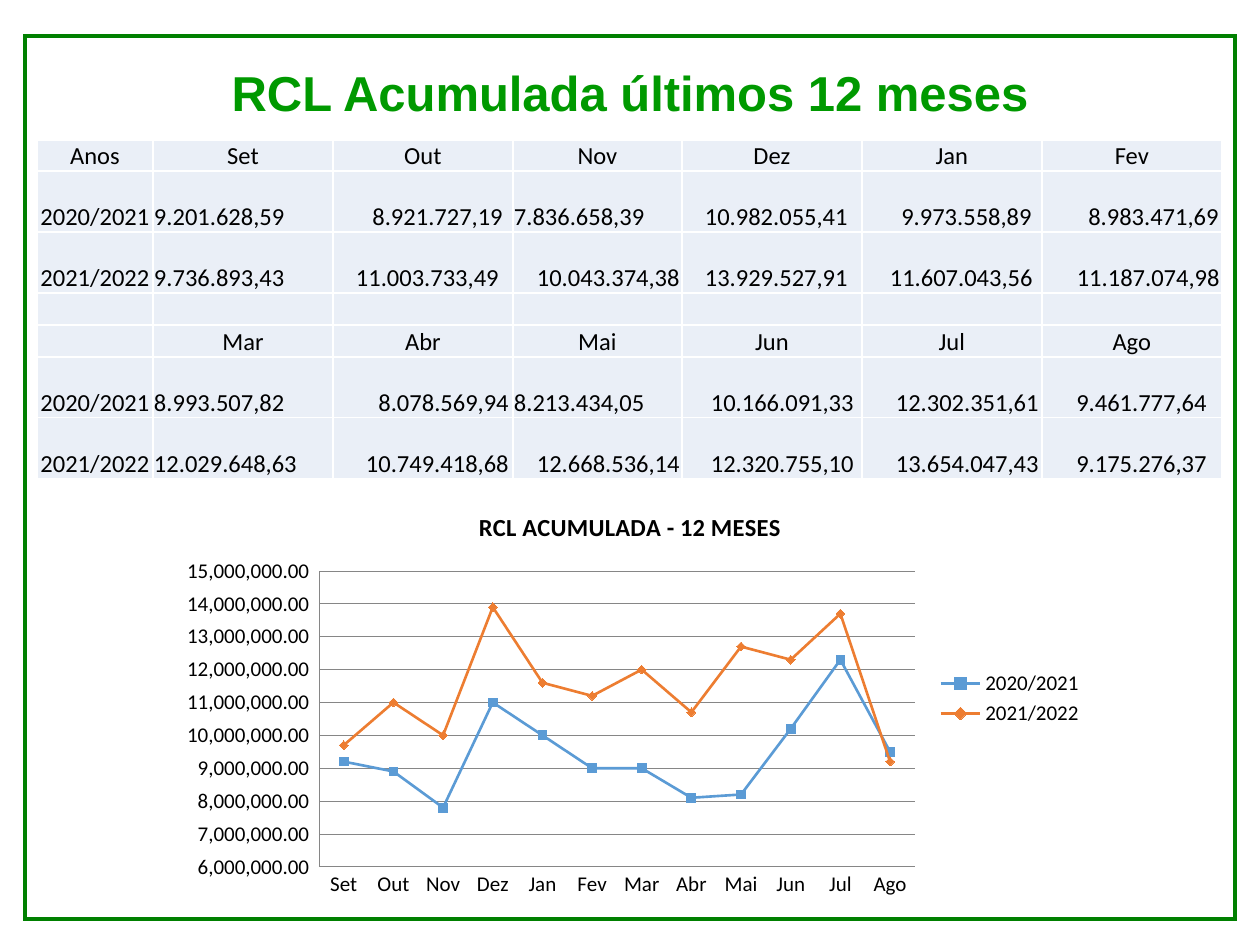
from lxml import etree
from pptx import Presentation
from pptx.chart.data import CategoryChartData
from pptx.dml.color import RGBColor
from pptx.enum.chart import (XL_CHART_TYPE as ChartType, XL_LEGEND_POSITION as LegendPos,
                             XL_MARKER_STYLE as Marker, XL_TICK_MARK as Tick)
from pptx.enum.shapes import MSO_SHAPE as Shape
from pptx.enum.text import MSO_ANCHOR as Anchor, PP_ALIGN as Align
from pptx.oxml import parse_xml
from pptx.oxml.ns import nsdecls, qn
from pptx.util import Emu, Pt

PX = 914400 // 126
BLACK, WHITE, GREEN = "000000", "FFFFFF", "008000"
YEARS = ["2020/2021", "2021/2022"]
MONTHS = ["Set", "Out", "Nov", "Dez", "Jan", "Fev",
          "Mar", "Abr", "Mai", "Jun", "Jul", "Ago"]
AMOUNTS = [
    ["9.201.628,59", "8.921.727,19", "7.836.658,39", "10.982.055,41",
     "9.973.558,89", "8.983.471,69", "8.993.507,82", "8.078.569,94",
     "8.213.434,05", "10.166.091,33", "12.302.351,61", "9.461.777,64"],
    ["9.736.893,43", "11.003.733,49", "10.043.374,38", "13.929.527,91",
     "11.607.043,56", "11.187.074,98", "12.029.648,63", "10.749.418,68",
     "12.668.536,14", "12.320.755,10", "13.654.047,43", "9.175.276,37"],
]
# Space right of each amount in px; None aligns it left
GAPS = [[None, 10, None, 14, 10, 3, None, 4, None, 8, 3, 15],
        [None, 14, 2, 14, 9, 2, None, 4, 2, 8, 3, 15]]


def px(n):
    return Emu(n * PX)


def color(value):
    return RGBColor.from_string(value)


def style(font, size, rgb=BLACK, name="Calibri", bold=False):
    font.size, font.name, font.bold = Pt(size), name, bold
    font.color.rgb = color(rgb)


def add_frame(s):
    sp = s.shapes.add_shape(Shape.RECTANGLE, px(25), px(36), px(1210), px(883))
    sp.shadow.inherit = False
    sp.fill.background()
    sp.line.color.rgb = color(GREEN)
    sp.line.width = Pt(2)
    ln = sp._element.spPr.find(qn("a:ln"))
    etree.SubElement(ln, qn("a:miter"), lim="800000")
    s.shapes._spTree.insert(2, sp._element)


def set_title(s, text):
    sp = s.shapes.title
    sp.left, sp.top, sp.width, sp.height = px(63), px(37), px(1134), px(118)
    tf = sp.text_frame
    tf.text = text
    tf.vertical_anchor = Anchor.MIDDLE
    p = tf.paragraphs[0]
    p.alignment, p.line_spacing = Align.CENTER, 0.9
    style(p.runs[0].font, 28, "009900", "Arial", True)


def set_borders(cell):
    tcPr = cell._tc.get_or_add_tcPr()
    for i, side in enumerate(("lnL", "lnR", "lnT", "lnB")):
        ln = parse_xml(f'<a:{side} {nsdecls("a")} w="12700"/>')
        fill = etree.SubElement(ln, qn("a:solidFill"))
        etree.SubElement(fill, qn("a:srgbClr"), val=WHITE)
        tcPr.insert(i, ln)


def fill_cell(cell, text, align=Align.CENTER, gap=1):
    cell.fill.solid()
    cell.fill.fore_color.rgb = color("EAEFF7")
    set_borders(cell)
    cell.vertical_anchor = Anchor.BOTTOM
    cell.margin_left = cell.margin_top = px(1)
    cell.margin_right, cell.margin_bottom = px(gap), 0
    p = cell.text_frame.paragraphs[0]
    p.text = text
    p.alignment = align
    for r in p.runs:
        style(r.font, 14)
    if not text:
        p._p.get_or_add_endParaRPr().set("sz", "1400")


def add_amounts_table(s):
    widths = [116, 180, 180, 169, 180, 180, 180]
    heights = [30, 61, 61, 32, 32, 61, 61]
    table = s.shapes.add_table(len(heights), len(widths), px(37), px(140),
                               px(sum(widths)), px(sum(heights))).table
    for col, w in zip(table.columns, widths):
        col.width = px(w)
    for row, h in zip(table.rows, heights):
        row.height = px(h)

    # Two half-years, with an empty row between them
    for top, first, corner in ((0, 0, "Anos"), (4, 6, "")):
        fill_cell(table.cell(top, 0), corner)
        for c in range(6):
            fill_cell(table.cell(top, c + 1), MONTHS[first + c])
        for y, year in enumerate(YEARS):
            row = top + 1 + y
            fill_cell(table.cell(row, 0), year)
            for c in range(6):
                gap = GAPS[y][first + c]
                align = Align.LEFT if gap is None else Align.RIGHT
                fill_cell(table.cell(row, c + 1), AMOUNTS[y][first + c], align, gap or 0)
    for c in range(len(widths)):
        fill_cell(table.cell(3, c), "")


def set_plot_area(chart, **fractions):
    plot_area = chart._chartSpace.chart.plotArea
    for old in plot_area.findall(qn("c:layout")):
        plot_area.remove(old)
    layout = parse_xml(f'<c:layout {nsdecls("c")}/>')
    manual = etree.SubElement(layout, qn("c:manualLayout"))
    modes = {"layoutTarget": "inner", "xMode": "edge", "yMode": "edge"}
    for tag, value in {**modes, **fractions}.items():
        etree.SubElement(manual, qn(f"c:{tag}"), val=str(value))
    plot_area.insert(0, layout)


def rounded(amount):
    """Chart value of a written amount, to the nearest hundred thousand."""
    return round(float(amount.replace(".", "").replace(",", ".")), -5)


def add_line_chart(s):
    width, height = 932, 415
    data = CategoryChartData(number_format="#,##0.00")
    data.categories = MONTHS
    for year, amounts in zip(YEARS, AMOUNTS):
        data.add_series(year, [rounded(a) for a in amounts])
    chart = s.shapes.add_chart(ChartType.LINE_MARKERS, px(164), px(491),
                               px(width), px(height), data).chart
    style(chart.font, 12)
    set_plot_area(chart, x=155 / width, y=80 / height, w=596 / width, h=296 / height)

    # Title and legend
    chart.has_title = True
    tf = chart.chart_title.text_frame
    tf.text = "RCL ACUMULADA - 12 MESES"
    style(tf.paragraphs[0].runs[0].font, 14, bold=True)
    chart.has_legend = True
    chart.legend.position = LegendPos.RIGHT
    chart.legend.include_in_layout = False

    # Axes
    values = chart.value_axis
    values.minimum_scale, values.maximum_scale, values.major_unit = 6e6, 15e6, 1e6
    values.tick_labels.number_format = "#,##0.00_)"
    values.tick_labels.number_format_is_linked = False
    for axis in (values, chart.category_axis):
        axis.major_tick_mark = axis.minor_tick_mark = Tick.NONE
    for line in (values.format.line, chart.category_axis.format.line,
                 values.major_gridlines.format.line):
        line.color.rgb = color("868686")
        line.width = Pt(0.5)

    # Series
    looks = (("5B9BD5", Marker.SQUARE), ("ED7D31", Marker.DIAMOND))
    chart.plots[0].vary_by_categories = False
    for series, (rgb, marker) in zip(chart.plots[0].series, looks):
        series.smooth = False
        series.format.line.color.rgb = color(rgb)
        series.format.line.width = Pt(1.5)
        series.marker.style, series.marker.size = marker, 5
        series.marker.format.fill.solid()
        series.marker.format.fill.fore_color.rgb = color(rgb)
        series.marker.format.line.color.rgb = color(rgb)


def main():
    prs = Presentation()
    prs.slide_width, prs.slide_height = px(1260), px(945)
    s = prs.slides.add_slide(prs.slide_layouts[5])
    add_frame(s)
    set_title(s, "RCL Acumulada últimos 12 meses")
    add_amounts_table(s)
    add_line_chart(s)
    prs.save("out.pptx")


if __name__ == "__main__":
    main()
